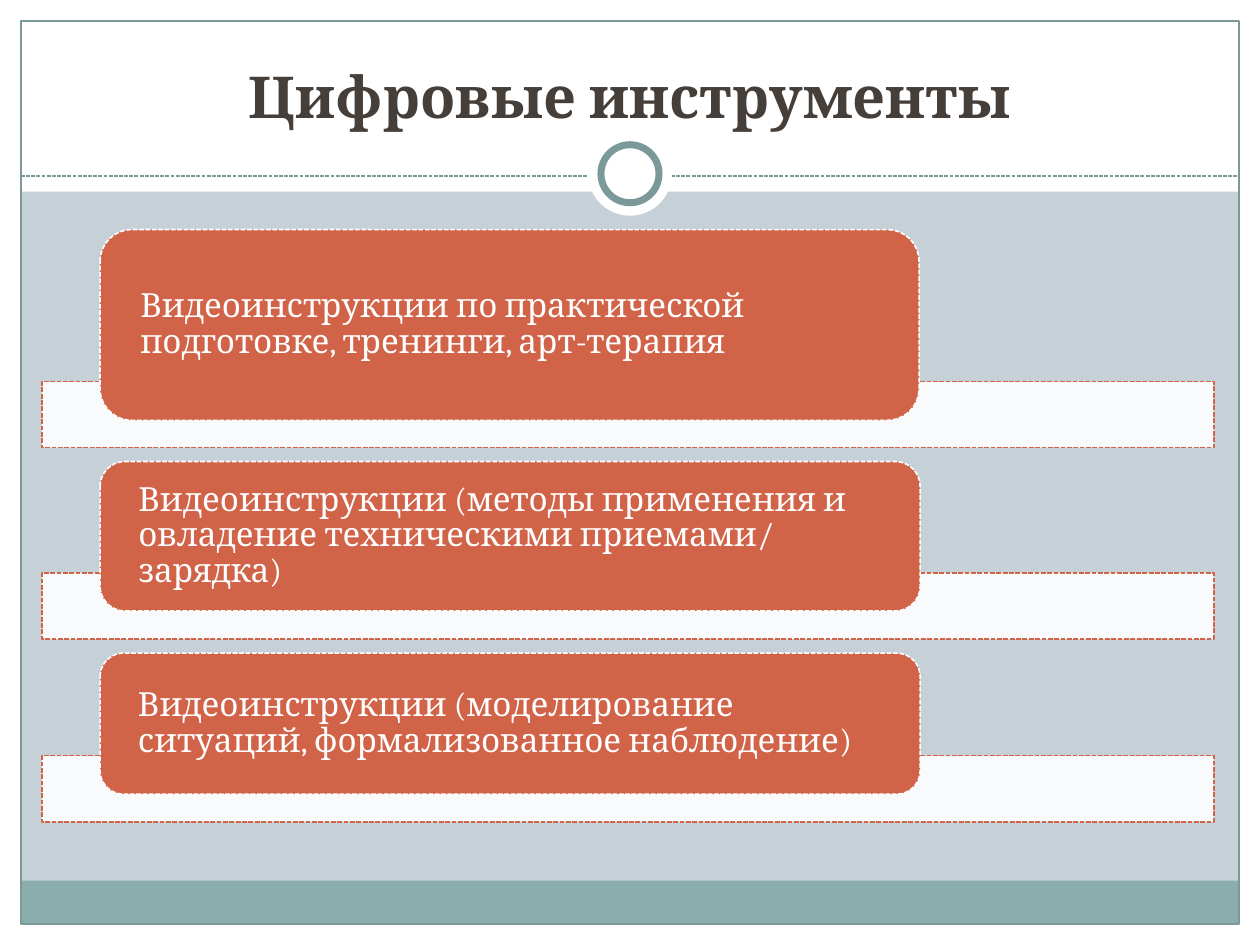
from dataclasses import dataclass

from lxml import etree
from pptx import Presentation
from pptx import util as u
from pptx.dml.color import RGBColor
from pptx.enum import dml, shapes, text
from pptx.oxml.ns import qn


@dataclass(frozen=True)
class Theme:
    font: str = "Cambria"
    title_size: float = 33
    body_size: float = 19
    white: str = "FFFFFF"
    back: str = "C5D1D7"
    footer: str = "8CADAE"
    frame: str = "7C999A"
    accent: str = "D16349"
    title: str = "463E38"


@dataclass(frozen=True)
class Box:
    left: float
    top: float
    width: float
    height: float

    def emu(self):
        return [u.Pt(v) for v in (self.left, self.top, self.width, self.height)]


@dataclass(frozen=True)
class Tool:
    card: Box
    bar_top: float
    words: str


T = Theme()
W, H, EDGE = 720, 540, 12
DASH = dml.MSO_LINE.SQUARE_DOT
SHAPE = shapes.MSO_SHAPE

BANDS = [
    (Box(0, H - EDGE, W, EDGE), T.white),
    (Box(0, 0, W, 109.5), T.white),
    (Box(0, 0, EDGE, H), T.white),
    (Box(W - EDGE, 0, EDGE, H), T.white),
    (Box(EDGE, 503.2, W - 2 * EDGE, 24.5), T.footer),
]

TOOLS = [
    Tool(Box(57.2, 131.2, 468, 109), 218,
         "Видеоинструкции по практической подготовке, тренинги, арт-терапия"),
    Tool(Box(57.2, 263.7, 468.6, 85.4), 327.3,
         "Видеоинструкции (методы применения и овладение техническими приемами/ зарядка)"),
    Tool(Box(57.2, 373.2, 468.6, 80.6), 431.8,
         "Видеоинструкции (моделирование ситуаций, формализованное наблюдение)"),
]


def rgb(color: str) -> RGBColor:
    return RGBColor.from_string(color)


def set_line(line, color: str, width: float, dash=None) -> None:
    line.color.rgb = rgb(color)
    line.width = u.Pt(width)
    if dash:
        line.dash_style = dash


def add_shape(s, kind, box: Box, fill=None, line=None, width=0.75, dash=None, alpha=None):
    sp = s.shapes.add_shape(kind, *box.emu())
    sp.shadow.inherit = False
    if fill:
        sp.fill.solid()
        sp.fill.fore_color.rgb = rgb(fill)
    else:
        sp.fill.background()
    if alpha:
        clr = sp.fill._xPr.find(qn("a:solidFill"))[0]
        etree.SubElement(clr, qn("a:alpha")).set("val", str(alpha * 1000))
    if line:
        set_line(sp.line, line, width, dash)
    else:
        sp.line.fill.background()
    return sp


def add_rule(s, top: float) -> None:
    sp = s.shapes.add_connector(shapes.MSO_CONNECTOR.STRAIGHT, u.Pt(EDGE), u.Pt(top),
                                u.Pt(W - EDGE), u.Pt(top))
    set_line(sp.line, T.frame, 0.75, DASH)
    etree.SubElement(sp._element.spPr, qn("a:effectLst"))


def put_text(sp, words: str, size: float, color: str, bold=False, align=text.PP_ALIGN.LEFT,
             anchor=text.MSO_ANCHOR.MIDDLE, side=7.2, top=0.0, spacing=1.0) -> None:
    tf = sp.text_frame
    tf.word_wrap = True
    tf.vertical_anchor = anchor
    tf.margin_left = tf.margin_right = u.Pt(side)
    tf.margin_top = tf.margin_bottom = u.Pt(top)
    p = tf.paragraphs[0]
    p.alignment = align
    p.line_spacing = spacing
    r = p.add_run()
    r.text = words
    r.font.name = T.font
    r.font.size = u.Pt(size)
    r.font.bold = bold
    r.font.color.rgb = rgb(color)


def add_tool(s, tool: Tool) -> None:
    add_shape(s, SHAPE.RECTANGLE, Box(24, tool.bar_top, 669.6, 37.8), T.white, T.accent,
              0.9, DASH, alpha=90)
    card = add_shape(s, SHAPE.ROUNDED_RECTANGLE, tool.card, T.accent, T.white, 0.9, DASH)
    put_text(card, tool.words, T.body_size, T.white, side=17.7, spacing=0.9)


def main() -> None:
    prs = Presentation()
    prs.slide_width, prs.slide_height = u.Pt(W), u.Pt(H)
    s = prs.slides.add_slide(prs.slide_layouts[6])
    s.background.fill.solid()
    s.background.fill.fore_color.rgb = rgb(T.back)

    for box, color in BANDS:
        add_shape(s, SHAPE.RECTANGLE, box, color)
    add_shape(s, SHAPE.RECTANGLE, Box(EDGE, EDGE, W - 2 * EDGE, H - 2 * EDGE), line=T.frame)
    add_rule(s, 100.6)
    add_shape(s, SHAPE.OVAL, Box(336, 75.3, 48, 48), T.white)
    add_shape(s, SHAPE.OVAL, Box(343.4, 82.7, 33.2, 33.2), T.white, T.frame, 4)

    title = s.shapes.add_textbox(*Box(24, 18, 672, 60).emu())
    put_text(title, "Цифровые инструменты", T.title_size, T.title, bold=True,
             align=text.PP_ALIGN.CENTER, anchor=text.MSO_ANCHOR.BOTTOM, top=3.6)
    for tool in TOOLS:
        add_tool(s, tool)
    prs.save("out.pptx")


if __name__ == "__main__":
    main()
